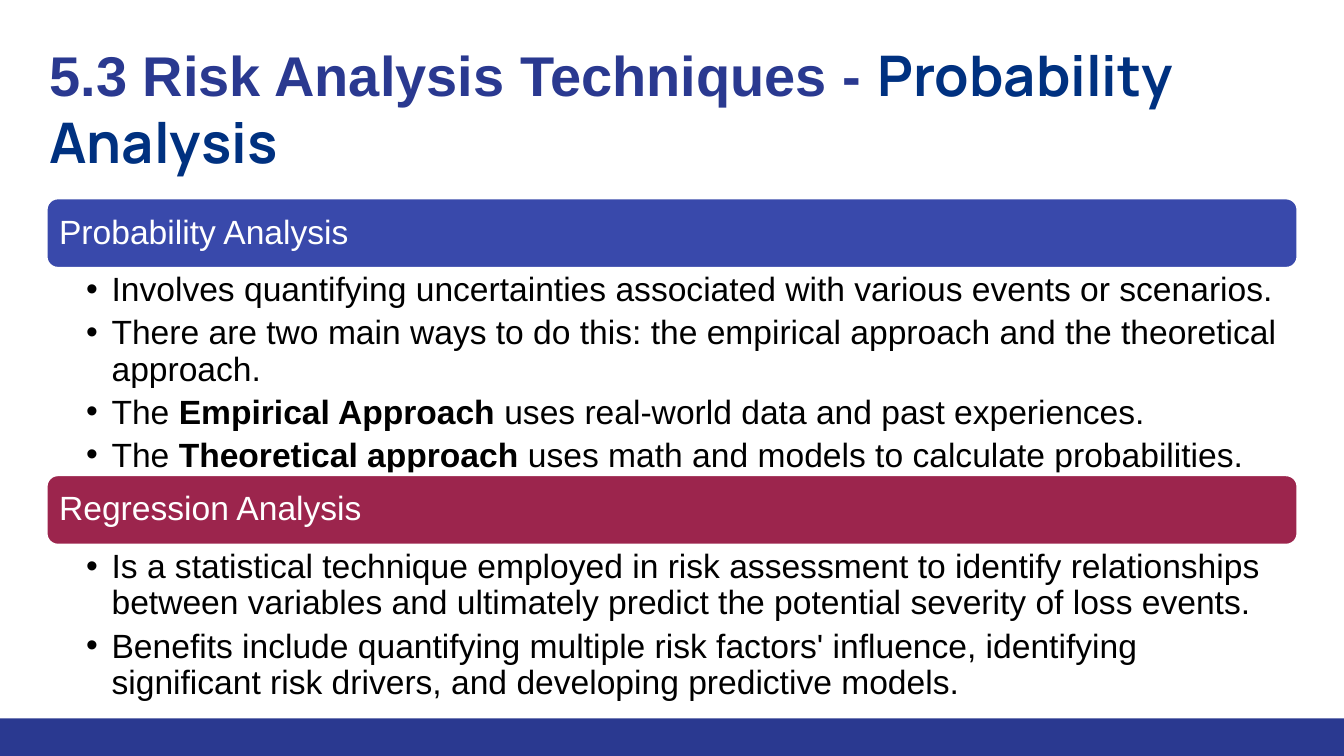
"""Build the risk analysis techniques slide."""
from dataclasses import dataclass

from lxml.etree import SubElement
from pptx import Presentation
from pptx.dml.color import RGBColor
from pptx.enum.shapes import MSO_SHAPE
from pptx.enum.text import MSO_ANCHOR, PP_ALIGN
from pptx.oxml.ns import qn
from pptx.util import Inches, Pt

COLORS = {
    "navy": "2A3990",
    "title": "003180",
    "indigo": "3949AB",
    "crimson": "9C254D",
    "white": "FFFFFF",
    "black": "000000",
}
SLIDE_WIDTH = 10
SLIDE_HEIGHT = SLIDE_WIDTH * 9 / 16
FOOTER_HEIGHT = 0.28
LEFT, WIDTH = 0.34, 9.32
BANNER_HEIGHT = 0.53
BANNER_INSET = 0.03
BULLET_INDENT = 0.19


@dataclass
class Run:
    text: str
    bold: bool = False
    color: str = "black"
    font: str = "Arial"
    size: int = 18


@dataclass
class Section:
    heading: str
    color: str
    top: float
    body_height: float
    bullets: list[list[Run]]


TITLE = [
    Run("5.3 Risk Analysis Techniques - ", True, "navy", size=30),
    Run("Probability Analysis", True, "title", "Manrope", 30),
]
SECTIONS = [
    Section("Probability Analysis", "indigo", 1.47, 1.53, [
        [Run("Involves quantifying uncertainties associated with various events or scenarios.")],
        [Run("There are two main ways to do this: the empirical approach and the theoretical approach.")],
        [Run("The "), Run("Empirical Approach", True),
         Run(" uses real-world data and past experiences.")],
        [Run("The "), Run("Theoretical approach", True),
         Run(" uses math and models to calculate probabilities.")],
    ]),
    Section("Regression Analysis", "crimson", 3.53, 1.15, [
        [Run("Is a statistical technique employed in risk assessment to identify relationships "
             "between variables and ultimately predict the potential severity of loss events.")],
        [Run("Benefits include quantifying multiple risk factors' influence, identifying "
             "significant risk drivers, and developing predictive models.")],
    ]),
]


def rgb(name: str) -> RGBColor:
    return RGBColor.from_string(COLORS[name])


def add_block(slide, kind: MSO_SHAPE, box: tuple, fill: str, outline: str | None = None) -> None:
    shape = slide.shapes.add_shape(kind, *map(Inches, box))
    shape.shadow.inherit = False
    shape.fill.solid()
    shape.fill.fore_color.rgb = rgb(fill)
    if outline:
        shape.line.color.rgb = rgb(outline)
        shape.line.width = Pt(2)
        shape.adjustments[0] = 0.17
    else:
        shape.line.fill.background()


def add_bullet(paragraph) -> None:
    paragraph.level = 1
    properties = paragraph._p.get_or_add_pPr()
    properties.set("marL", str(Inches(BULLET_INDENT)))
    properties.set("indent", str(-Inches(BULLET_INDENT)))
    color = SubElement(properties, qn("a:buClr"))
    SubElement(color, qn("a:srgbClr"), val=COLORS["black"])
    SubElement(properties, qn("a:buFont"), typeface="Arial")
    SubElement(properties, qn("a:buChar"), char="•")


def add_text(slide, box: tuple, insets: tuple, paragraphs: list[list[Run]],
             anchor: MSO_ANCHOR = MSO_ANCHOR.TOP, spacing: float = 1.0,
             after: float = 0, bulleted: bool = False) -> None:
    frame = slide.shapes.add_textbox(*map(Inches, box)).text_frame
    frame.word_wrap = True
    frame.vertical_anchor = anchor
    (frame.margin_left, frame.margin_top,
     frame.margin_right, frame.margin_bottom) = map(Inches, insets)
    for index, runs in enumerate(paragraphs):
        paragraph = frame.add_paragraph() if index else frame.paragraphs[0]
        paragraph.alignment = PP_ALIGN.LEFT
        paragraph.line_spacing = spacing
        paragraph.space_after = Pt(after)
        if bulleted:
            add_bullet(paragraph)
        for item in runs:
            run = paragraph.add_run()
            run.text = item.text
            run.font.name = item.font
            run.font.size = Pt(item.size)
            run.font.bold = item.bold
            run.font.color.rgb = rgb(item.color)


def add_section(slide, section: Section) -> None:
    banner = (LEFT, section.top, WIDTH, BANNER_HEIGHT)
    add_block(slide, MSO_SHAPE.ROUNDED_RECTANGLE, banner, section.color, "white")
    heading = (LEFT + BANNER_INSET, section.top + BANNER_INSET,
               WIDTH - 2 * BANNER_INSET, BANNER_HEIGHT - 2 * BANNER_INSET)
    add_text(slide, heading, (0.07,) * 4, [[Run(section.heading, color="white")]],
             MSO_ANCHOR.MIDDLE, spacing=0.9)
    body = (LEFT, section.top + BANNER_HEIGHT, WIDTH, section.body_height)
    add_text(slide, body, (0.3, 0.03, 0.14, 0.03), section.bullets,
             spacing=0.9, after=3.6, bulleted=True)


def main() -> None:
    presentation = Presentation()
    presentation.slide_width = Inches(SLIDE_WIDTH)
    presentation.slide_height = Inches(SLIDE_HEIGHT)
    slide = presentation.slides.add_slide(presentation.slide_layouts[6])
    footer = (0, SLIDE_HEIGHT - FOOTER_HEIGHT, SLIDE_WIDTH, FOOTER_HEIGHT)
    add_block(slide, MSO_SHAPE.RECTANGLE, footer, "navy")
    for section in SECTIONS:
        add_section(slide, section)
    add_text(slide, (0.27, 0.2, 9.2, 0.89), (0.1,) * 4, [TITLE])
    presentation.save("out.pptx")


if __name__ == "__main__":
    main()
